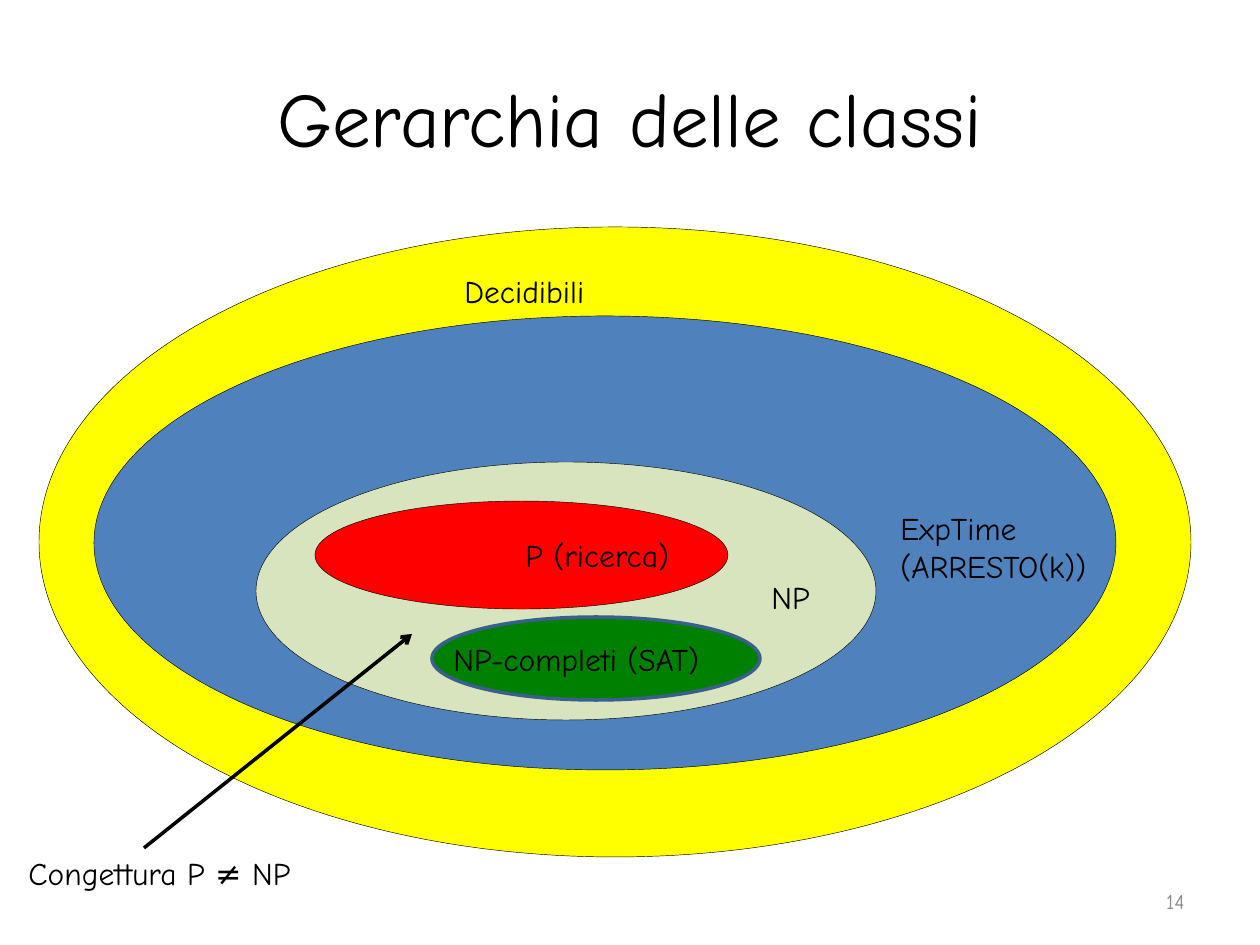
"""Build a slide of nested ellipses showing the hierarchy of complexity classes."""
from pptx import Presentation
from pptx.dml.color import RGBColor
from pptx.enum.shapes import MSO_CONNECTOR as Link, MSO_SHAPE as Shape
from pptx.enum.text import MSO_ANCHOR as Anchor, PP_ALIGN as Align
from pptx.oxml.ns import qn
from pptx.util import Emu, Pt

PX = 914400 / 126
FONT = "Comic Neue"
BLACK = RGBColor(0x00, 0x00, 0x00)
GRAY = RGBColor(0x8C, 0x8C, 0x8C)
YELLOW = RGBColor(0xFF, 0xFF, 0x00)
BLUE = RGBColor(0x4F, 0x81, 0xBD)
LIME = RGBColor(0xD7, 0xE4, 0xBD)
RED = RGBColor(0xFF, 0x00, 0x00)
GREEN = RGBColor(0x00, 0x80, 0x00)
NAVY = RGBColor(0x3A, 0x5F, 0x8C)


def scale(*sizes):
    return [Emu(round(size * PX)) for size in sizes]


def write(box, lines, size=18, color=BLACK, align=Align.LEFT, anchor=Anchor.TOP):
    frame = slide.shapes.add_textbox(*scale(*box)).text_frame
    frame.word_wrap = True
    frame.vertical_anchor = anchor
    for index, line in enumerate(lines):
        para = frame.add_paragraph() if index else frame.paragraphs[0]
        para.alignment = align
        run = para.add_run()
        run.text = line
        run.font.name = FONT
        run.font.size = Pt(size)
        run.font.color.rgb = color


deck = Presentation()
deck.slide_width, deck.slide_height = scale(1260, 945)
slide = deck.slides.add_slide(deck.slide_layouts[6])

write((63, 38, 1134, 158), ["Gerarchia delle classi"], 44,
      align=Align.CENTER, anchor=Anchor.MIDDLE)
write((903, 876, 294, 50), ["14"], 12, GRAY, Align.RIGHT, Anchor.MIDDLE)

ovals = [
    ((39, 227, 1152, 630), YELLOW, BLACK, 0.25),
    ((94, 316, 1022, 454), BLUE, BLACK, 0.25),
    ((256, 462, 620, 258), LIME, BLACK, 0.25),
    ((315, 501, 413, 108), RED, BLACK, 0.25),
    ((432, 617, 328, 83), GREEN, NAVY, 2),
]
for box, fill, edge, width in ovals:
    oval = slide.shapes.add_shape(Shape.OVAL, *scale(*box))
    oval.shadow.inherit = False
    oval.fill.solid()
    oval.fill.fore_color.rgb = fill
    oval.line.color.rgb = edge
    oval.line.width = Pt(width)

labels = [
    ((452, 266, 178, 50), ["Decidibili"]),
    ((888, 503, 248, 89), ["ExpTime", "(ARRESTO(k))"]),
    ((513, 530, 185, 50), ["P (ricerca)"]),
    ((759, 572, 168, 50), ["NP"]),
    ((441, 634, 349, 50), ["NP-completi (SAT)"]),
    ((16, 848, 299, 50), ["Congettura P ≠ NP"]),
]
for box, lines in labels:
    write(box, lines)

arrow = slide.shapes.add_connector(Link.STRAIGHT, *scale(144, 848, 412, 634))
arrow.line.color.rgb = BLACK
arrow.line.width = Pt(2)
props = arrow._element.spPr
tip = props.find(qn("a:ln")).makeelement(qn("a:tailEnd"), {"type": "arrow"})
props.find(qn("a:ln")).append(tip)
props.append(props.makeelement(qn("a:effectLst"), {}))

deck.save("out.pptx")
